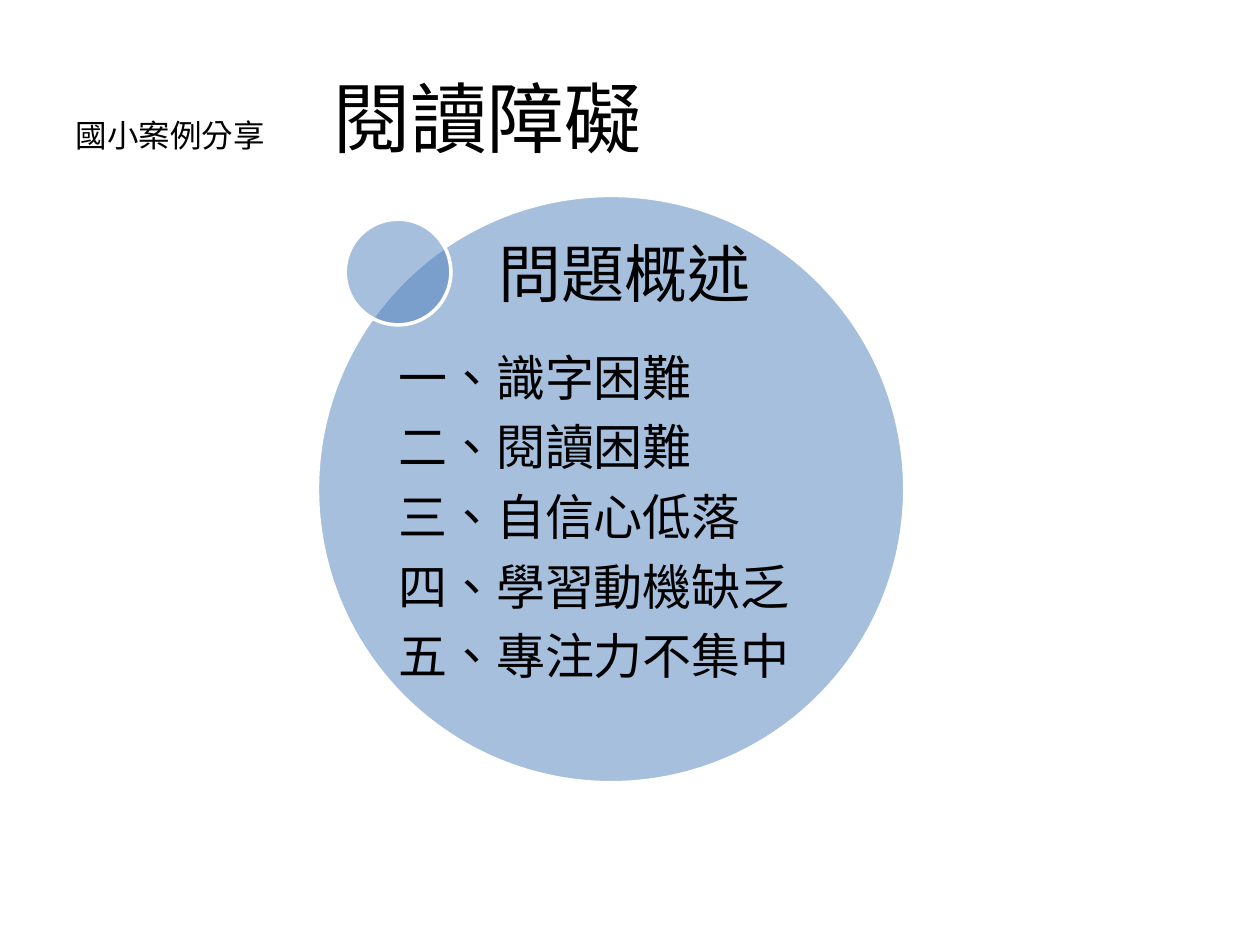
import pptx
import pptx.util
import pptx.dml.color
import pptx.enum.lang
import pptx.enum.shapes
import pptx.enum.text
import pptx.oxml
import pptx.oxml.ns
from pptx.util import Cm, Pt

COLORS = {"text": "000000", "circle": "4F81BD", "outline": "FFFFFF"}
CJK_FONT = "Noto Sans CJK SC"
TITLE_SPANS = [("國小案例分享\t", 18), ("閱讀障礙", 44)]
HEADING = "問題概述"
PROBLEMS = ["一、識字困難", "二、閱讀困難", "三、自信心低落", "四、學習動機缺乏", "五、專注力不集中"]
CIRCLES = [(6.4, 3.94, 11.84), (6.96, 4.42, 2.13)]
ALIGN = pptx.enum.text.PP_ALIGN
NAMESPACE = pptx.oxml.ns.nsdecls("a")


def rgb(name):
    return pptx.dml.color.RGBColor.from_string(COLORS[name])


def add_span(para, text, size, font_name):
    span = para.add_run()
    span.text = text
    formats = {
        "size": Pt(size),
        "name": font_name,
        "language_id": pptx.enum.lang.MSO_LANGUAGE_ID.TRADITIONAL_CHINESE,
    }
    for key, value in formats.items():
        setattr(span.font, key, value)
    span.font.color.rgb = rgb("text")
    span.font._element.append(
        pptx.oxml.parse_xml(f'<a:ea {NAMESPACE} typeface="{font_name}"/>')
    )


def format_frame(frame, **margins):
    formats = {
        "word_wrap": True,
        "auto_size": pptx.enum.text.MSO_AUTO_SIZE.NONE,
        "vertical_anchor": pptx.enum.text.MSO_ANCHOR.MIDDLE,
        **margins,
    }
    for key, value in formats.items():
        setattr(frame, key, value)


def add_title(page):
    title = page.shapes.title
    place = {"left": Cm(1.27), "top": Cm(0.76), "width": Cm(22.86), "height": Cm(3.18)}
    for key, value in place.items():
        setattr(title, key, value)
    format_frame(title.text_frame)
    para = title.text_frame.paragraphs[0]
    para.alignment = ALIGN.LEFT
    para._p.get_or_add_pPr().append(
        pptx.oxml.parse_xml(
            f'<a:tabLst {NAMESPACE}><a:tab pos="{Cm(5.2)}" algn="l"/></a:tabLst>'
        )
    )
    for text, size in TITLE_SPANS:
        add_span(para, text, size, CJK_FONT)


def add_circle(page, left, top, size):
    circle = page.shapes.add_shape(
        pptx.enum.shapes.MSO_SHAPE.OVAL, Cm(left), Cm(top), Cm(size), Cm(size)
    )
    circle.shadow.inherit = False
    circle.fill.solid()
    circle.fill.fore_color.rgb = rgb("circle")
    color = circle._element.spPr.find(
        f'{pptx.oxml.ns.qn("a:solidFill")}/{pptx.oxml.ns.qn("a:srgbClr")}'
    )
    color.append(pptx.oxml.parse_xml(f'<a:alpha {NAMESPACE} val="50000"/>'))
    circle.line.color.rgb = rgb("outline")
    circle.line.width = Pt(2)


def add_text(page, place, lines, size, font_name, margin, para_formats):
    box = page.shapes.add_textbox(*map(Cm, place))
    frame = box.text_frame
    format_frame(
        frame, margin_left=0, margin_right=0, margin_top=Cm(margin), margin_bottom=Cm(margin)
    )
    for index, line in enumerate(lines):
        para = frame.add_paragraph() if index else frame.paragraphs[0]
        for key, value in para_formats.items():
            setattr(para, key, value)
        add_span(para, line, size, font_name)


def main():
    deck = pptx.Presentation()
    deck.slide_width, deck.slide_height = Cm(25.4), Cm(19.05)
    page = deck.slides.add_slide(deck.slide_layouts[5])
    add_title(page)
    for circle in CIRCLES:
        add_circle(page, *circle)
    add_text(page, (6.91, 4.42, 11.38, 2.13), [HEADING], 36, CJK_FONT, 0.13,
             {"alignment": ALIGN.CENTER})
    add_text(page, (8.03, 6.55, 11.38, 7.85), PROBLEMS, 28, "Calibri", 0.1,
             {"alignment": ALIGN.LEFT, "line_spacing": 0.9, "space_after": Pt(9.5)})
    deck.save("out.pptx")


if __name__ == "__main__":
    main()
